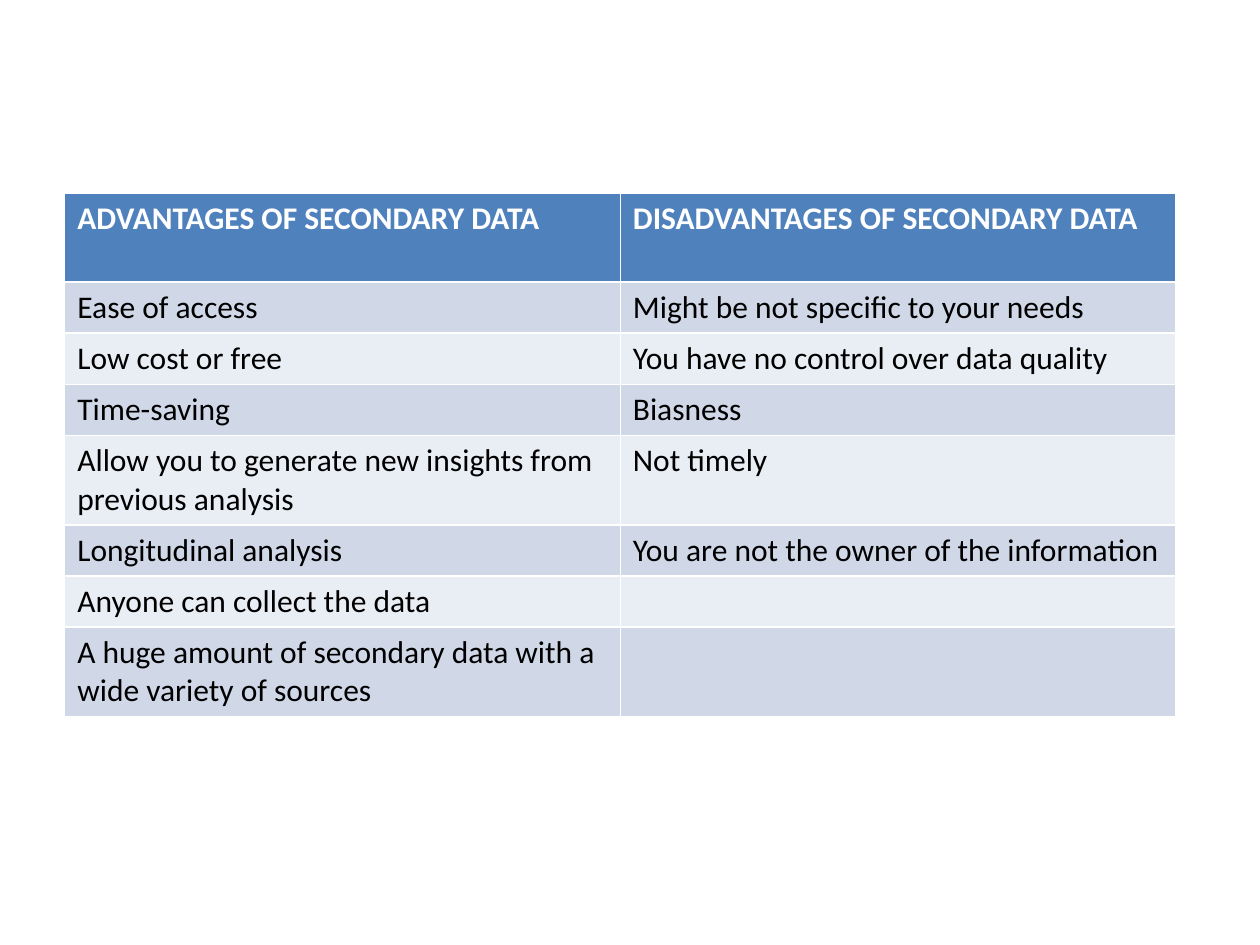
from pptx import Presentation
from pptx.dml.color import RGBColor
from pptx.util import Pt

COLOURS = {
    "header": "4F81BD",
    "odd_row": "D0D8E8",
    "even_row": "E9EDF4",
    "header_text": "FFFFFF",
    "body_text": "000000",
}

ROWS = [
    ("ADVANTAGES OF SECONDARY DATA", "DISADVANTAGES OF SECONDARY DATA"),
    ("Ease of access", "Might be not specific to your needs"),
    ("Low cost or free", "You have no control over data quality"),
    ("Time-saving", "Biasness"),
    ("Allow you to generate new insights from previous analysis", "Not timely"),
    ("Longitudinal analysis", "You are not the owner of the information"),
    ("Anyone can collect the data", ""),
    ("A huge amount of secondary data with a wide variety of sources", ""),
]
TALL_ROWS = {0, 4, 7}
ROW_HEIGHT, TALL_ROW_HEIGHT = 29.2, 51
COLUMN_WIDTH = 317.5


def colour(name):
    return RGBColor.from_string(COLOURS[name])


def fill_cell(cell, text, fill_name, is_header):
    cell.fill.solid()
    cell.fill.fore_color.rgb = colour(fill_name)
    cell.text = text
    font = cell.text_frame.paragraphs[0].font
    font.name = "Calibri"
    font.size = Pt(18)
    font.bold = is_header
    font.color.rgb = colour("header_text" if is_header else "body_text")


def add_comparison_table(slide):
    heights = [TALL_ROW_HEIGHT if index in TALL_ROWS else ROW_HEIGHT
               for index in range(len(ROWS))]
    # The default table style supplies the white rules between cells
    table = slide.shapes.add_table(
        len(ROWS), 2, Pt(37), Pt(110.2), Pt(2 * COLUMN_WIDTH), Pt(sum(heights))
    ).table
    for column in table.columns:
        column.width = Pt(COLUMN_WIDTH)

    for row_index, texts in enumerate(ROWS):
        table.rows[row_index].height = Pt(heights[row_index])
        is_header = row_index == 0
        band = "odd_row" if row_index % 2 else "even_row"
        for column_index, text in enumerate(texts):
            fill_cell(table.cell(row_index, column_index), text,
                      "header" if is_header else band, is_header)


def main():
    presentation = Presentation()
    presentation.slide_width, presentation.slide_height = Pt(720), Pt(540)
    slide = presentation.slides.add_slide(presentation.slide_layouts[6])
    add_comparison_table(slide)
    presentation.save("out.pptx")


if __name__ == "__main__":
    main()
